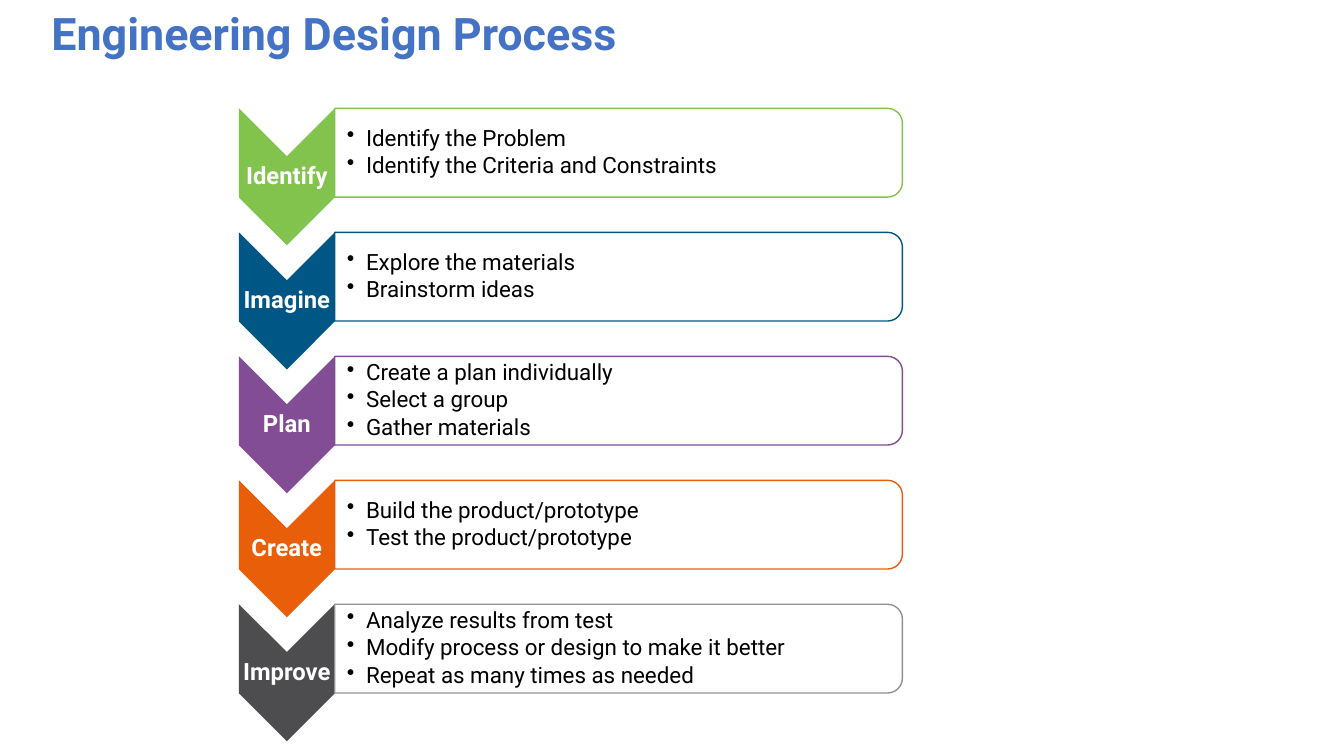
"""Build the Engineering Design Process slide."""
from lxml.etree import SubElement
from pptx import Presentation
from pptx.dml.color import RGBColor
from pptx.enum.shapes import MSO_SHAPE
from pptx.enum.text import MSO_ANCHOR, PP_ALIGN
from pptx.oxml.ns import qn
from pptx.util import Inches, Pt

TITLE = "Engineering Design Process"
STEPS = [
    ("Identify", "82C34D", "82C34D",
     ["Identify the Problem", "Identify the Criteria and Constraints"]),
    ("Imagine", "005786", "005786",
     ["Explore the materials", "Brainstorm ideas"]),
    ("Plan", "824D94", "824D94",
     ["Create a plan individually", "Select a group", "Gather materials"]),
    ("Create", "E95E09", "E95E09",
     ["Build the product/prototype", "Test the product/prototype"]),
    ("Improve", "4D4D4F", "919191",
     ["Analyze results from test", "Modify process or design to make it better",
      "Repeat as many times as needed"]),
]
FONT = "Roboto"
FIRST_TOP, ROW_PITCH = 1.075, 1.23
ARROW_LEFT, ARROW_WIDTH, ARROW_HEIGHT = 2.37, 0.95, 1.36
LABEL_HEIGHT = 0.41
PANEL_LEFT = ARROW_LEFT + ARROW_WIDTH
PANEL_WIDTH, PANEL_HEIGHT = 5.63, 0.88
TEXT_WIDTH, TEXT_HEIGHT = 5.59, 0.8
BULLET_INDENT = 0.19


def color(value):
    return RGBColor.from_string(value)


def format_paragraph(paragraph, size, font_color, bold=False):
    paragraph.line_spacing = 0.9
    paragraph.font.name = FONT
    paragraph.font.size = Pt(size)
    paragraph.font.bold = bold
    paragraph.font.color.rgb = color(font_color)


def add_turned_shape(slide, kind, left, top, width, height, fill, line=None):
    center_x, center_y = left + width / 2, top + height / 2
    shape = slide.shapes.add_shape(
        kind, Inches(center_x - height / 2), Inches(center_y - width / 2),
        Inches(height), Inches(width))
    shape.rotation = 90
    shape.shadow.inherit = False
    shape.fill.solid()
    shape.fill.fore_color.rgb = color(fill)
    if line:
        shape.line.color.rgb = color(line)
        shape.line.width = Pt(1)
    else:
        shape.line.fill.background()


def add_text(slide, left, top, width, height, lines, left_margin=0.01):
    box = slide.shapes.add_textbox(
        Inches(left), Inches(top), Inches(width), Inches(height))
    frame = box.text_frame
    frame.word_wrap = True
    frame.vertical_anchor = MSO_ANCHOR.MIDDLE
    frame.margin_left = Inches(left_margin)
    frame.margin_top = frame.margin_right = frame.margin_bottom = Inches(0.01)
    frame.text = "\n".join(lines)
    return frame.paragraphs


def add_bullet(paragraph):
    properties = paragraph._p.get_or_add_pPr()
    properties.set("marL", str(Inches(BULLET_INDENT)))
    properties.set("indent", str(-Inches(BULLET_INDENT)))
    SubElement(properties, qn("a:buChar")).set("char", "•")


def add_title(slide):
    title = slide.shapes.title
    title.left, title.top = Inches(0.41), Inches(-0.1)
    title.width, title.height = Inches(9.7), Inches(1.45)
    frame = title.text_frame
    frame.text = TITLE
    frame.vertical_anchor = MSO_ANCHOR.TOP
    frame.margin_top = Inches(0.22)
    paragraph = frame.paragraphs[0]
    paragraph.alignment = PP_ALIGN.LEFT
    format_paragraph(paragraph, 32, "4472C4", bold=True)


def add_step(slide, top, label, fill, outline, actions):
    add_turned_shape(slide, MSO_SHAPE.CHEVRON, ARROW_LEFT, top,
                     ARROW_WIDTH, ARROW_HEIGHT, fill)
    label_top = top + (ARROW_HEIGHT - LABEL_HEIGHT) / 2
    for paragraph in add_text(slide, ARROW_LEFT, label_top, ARROW_WIDTH,
                              LABEL_HEIGHT, [label]):
        paragraph.alignment = PP_ALIGN.CENTER
        format_paragraph(paragraph, 17, "FFFFFF", bold=True)

    add_turned_shape(slide, MSO_SHAPE.ROUND_2_SAME_RECTANGLE, PANEL_LEFT, top,
                     PANEL_WIDTH, PANEL_HEIGHT, "FFFFFF", outline)
    text_top = top + (PANEL_HEIGHT - TEXT_HEIGHT) / 2
    for paragraph in add_text(slide, PANEL_LEFT, text_top, TEXT_WIDTH,
                              TEXT_HEIGHT, actions, left_margin=0.12):
        add_bullet(paragraph)
        paragraph.space_after = Pt(2.4)
        format_paragraph(paragraph, 16, "000000")


def main():
    presentation = Presentation()
    presentation.slide_width = Inches(13.33)
    presentation.slide_height = Inches(7.5)
    slide = presentation.slides.add_slide(presentation.slide_layouts[5])
    add_title(slide)
    for row, step in enumerate(STEPS):
        add_step(slide, FIRST_TOP + row * ROW_PITCH, *step)
    presentation.save("out.pptx")


if __name__ == "__main__":
    main()
